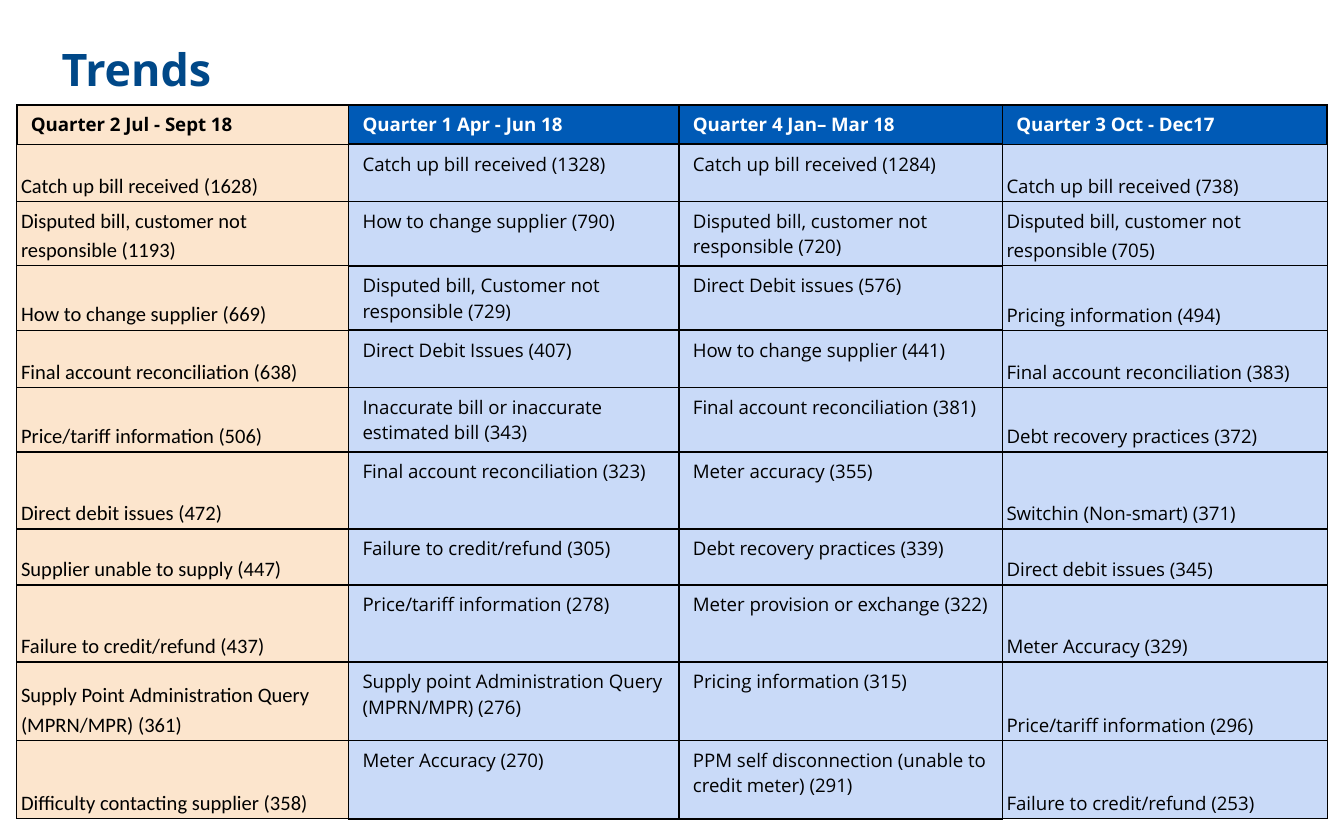
from dataclasses import dataclass

from lxml.etree import SubElement
from pptx import Presentation
from pptx.dml.color import RGBColor
from pptx.enum.text import MSO_ANCHOR as Anchor
from pptx.oxml.ns import qn
from pptx.util import Pt

PX = 9525
BLACK, WHITE, NAVY, BLUE = "000000", "FFFFFF", "004888", "005AB6"
PEACH, PALE_BLUE = "FCE5CD", "C9DAF8"

COLUMN_WIDTHS = [237, 236, 231, 232]
ROW_HEIGHTS = [28, 41, 46, 46, 41, 46, 55, 40, 55, 56, 56]
ROWS = [
    ["Quarter 2 Jul - Sept 18", "Quarter 1 Apr - Jun 18",
     "Quarter 4 Jan– Mar 18", "Quarter 3 Oct - Dec17"],
    ["Catch up bill received (1628)", "Catch up bill received (1328)",
     "Catch up bill received (1284)", "Catch up bill received (738)"],
    ["Disputed bill, customer not responsible (1193)", "How to change supplier (790)",
     "Disputed bill, customer not responsible (720)",
     "Disputed bill, customer not responsible (705)"],
    ["How to change supplier (669)", "Disputed bill, Customer not responsible (729)",
     "Direct Debit issues (576)", "Pricing information (494)"],
    ["Final account reconciliation (638)", "Direct Debit Issues (407)",
     "How to change supplier (441)", "Final account reconciliation (383)"],
    ["Price/tariff information (506)", "Inaccurate bill or inaccurate estimated bill (343)",
     "Final account reconciliation (381)", "Debt recovery practices (372)"],
    ["Direct debit issues (472)", "Final account reconciliation (323)",
     "Meter accuracy (355)", "Switchin (Non-smart) (371)"],
    ["Supplier unable to supply (447)", "Failure to credit/refund (305)",
     "Debt recovery practices (339)", "Direct debit issues (345)"],
    ["Failure to credit/refund (437)", "Price/tariff information (278)",
     "Meter provision or exchange (322)", "Meter Accuracy (329)"],
    ["Supply Point Administration Query (MPRN/MPR) (361)",
     "Supply point Administration Query (MPRN/MPR) (276)",
     "Pricing information (315)", "Price/tariff information (296)"],
    ["Difficulty contacting supplier (358)", "Meter Accuracy (270)",
     "PPM self disconnection (unable to credit meter) (291)",
     "Failure to credit/refund (253)"],
]


@dataclass
class CellStyle:
    """Border widths are points, in the order left, right, top, bottom."""
    fill: str
    borders: tuple
    color: str = BLACK
    font: str = "Open Sans"
    size: int = 10
    bold: bool = False
    compact: bool = False


HEADER_STYLES = [
    CellStyle(PEACH, (1, 1, 1, 0.75), bold=True),
    CellStyle(BLUE, (1, 1, 1, 1), WHITE, bold=True),
    CellStyle(BLUE, (1, 1, 1, 1), WHITE, bold=True),
    CellStyle(BLUE, (1, 1, 1, 0.75), WHITE, bold=True),
]
BODY_STYLES = [
    CellStyle(PEACH, (0.75,) * 4, font="Calibri", size=11, compact=True),
    CellStyle(PALE_BLUE, (0.75, 1, 1, 1)),
    CellStyle(PALE_BLUE, (1, 0.75, 1, 1)),
    CellStyle(PALE_BLUE, (0.75,) * 4, compact=True),
]


def rgb(value):
    return RGBColor.from_string(value)


def px(*lengths):
    return [length * PX for length in lengths]


def add_span(para, text, font, size, color, bold):
    span = para.add_run()
    span.text = text
    span.font.name = font
    span.font.size = Pt(size)
    span.font.bold = bold
    span.font.color.rgb = rgb(color)


def set_margins(target, across, down):
    target.margin_left = target.margin_right = across * PX
    target.margin_top = target.margin_bottom = down * PX


def set_borders(cell, widths):
    properties = cell._tc.get_or_add_tcPr()
    for position, (side, width) in enumerate(zip("LRTB", widths)):
        line = SubElement(properties, qn(f"a:ln{side}"), w=str(Pt(width)))
        fill = SubElement(line, qn("a:solidFill"))
        SubElement(fill, qn("a:srgbClr"), val=BLACK)
        properties.insert(position, line)


def fill_cell(cell, text, style):
    cell.fill.solid()
    cell.fill.fore_color.rgb = rgb(style.fill)
    set_borders(cell, style.borders)
    para = cell.text_frame.paragraphs[0]
    if style.compact:
        set_margins(cell, 3, 2)
        cell.vertical_anchor = Anchor.BOTTOM
        para.line_spacing = 1.15
    else:
        set_margins(cell, 10, 5)
        cell.vertical_anchor = Anchor.TOP
    add_span(para, text, style.font, style.size, style.color, style.bold)


def add_title(page, left, top, width, height):
    box = page.shapes.add_textbox(*px(left, top, width, height))
    frame = box.text_frame
    frame.word_wrap = True
    set_margins(frame, 10, 10)
    add_span(frame.paragraphs[0], "Trends", "Open Sans", 24, NAVY, True)


def add_trends_table(page, left, top):
    frame = page.shapes.add_table(
        len(ROWS), len(COLUMN_WIDTHS),
        *px(left, top, sum(COLUMN_WIDTHS), sum(ROW_HEIGHTS)))
    table = frame.table
    for column, width in zip(table.columns, COLUMN_WIDTHS):
        column.width = width * PX
    for index, (row, height, texts) in enumerate(zip(table.rows, ROW_HEIGHTS, ROWS)):
        row.height = height * PX
        styles = BODY_STYLES if index else HEADER_STYLES
        for cell, text, style in zip(row.cells, texts, styles):
            fill_cell(cell, text, style)


def main():
    deck = Presentation()
    deck.slide_width, deck.slide_height = px(960, 600)
    page = deck.slides.add_slide(deck.slide_layouts[6])
    add_title(page, 34, 20, 864, 100)
    add_trends_table(page, 12, 75)
    deck.save("out.pptx")


if __name__ == "__main__":
    main()
